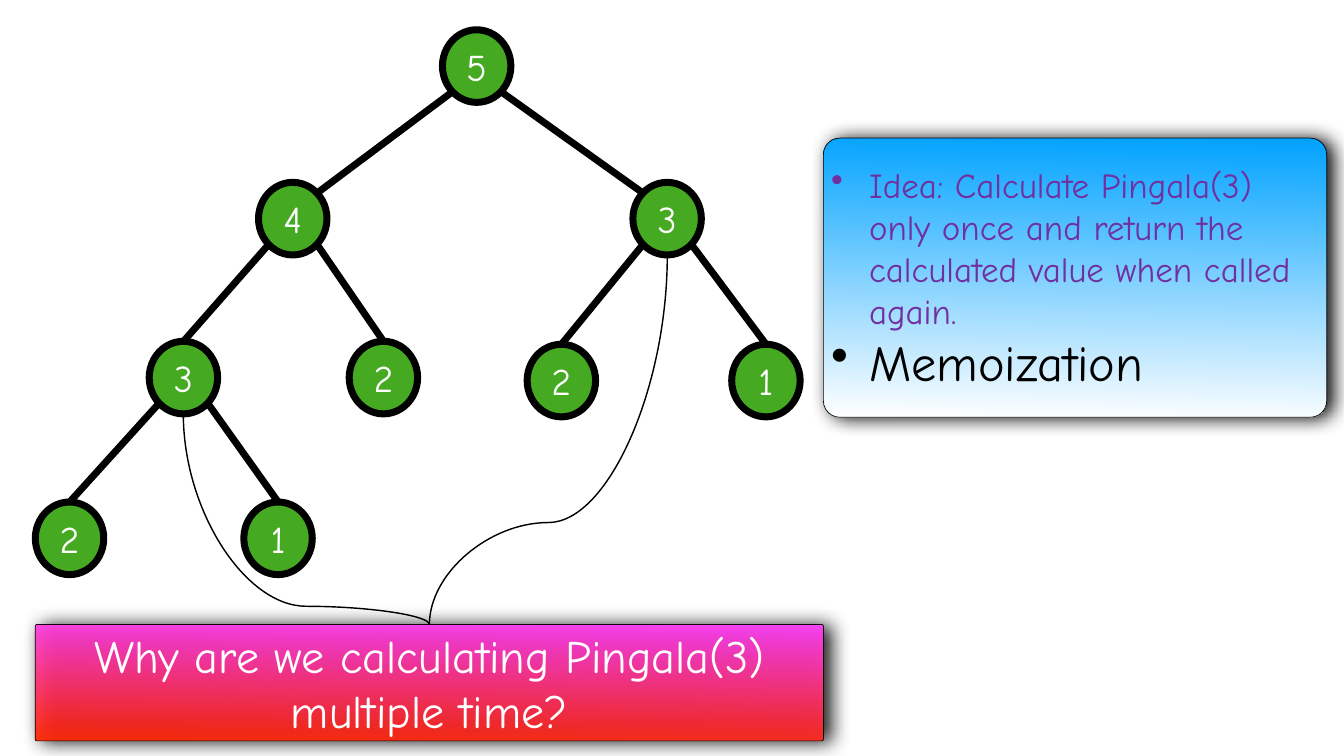
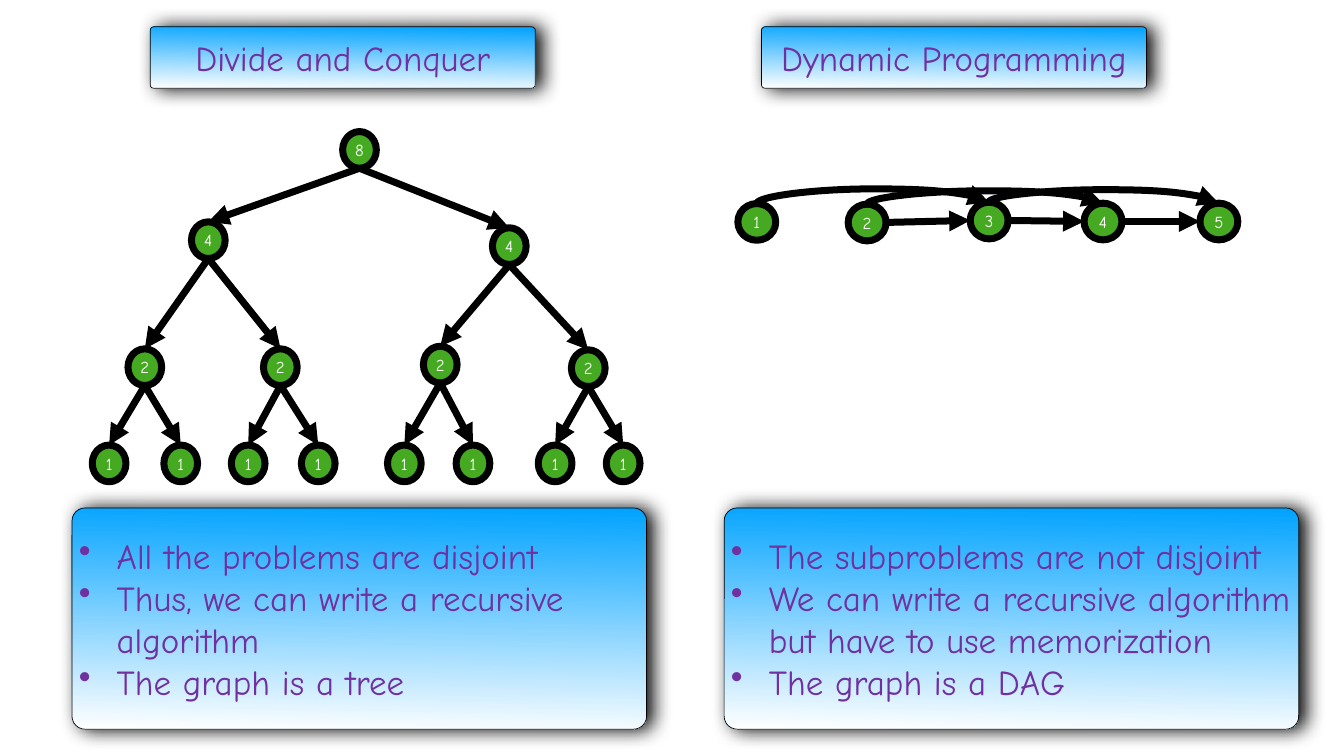
from lxml import etree
from pptx import Presentation
from pptx import util as u
from pptx.dml.color import RGBColor
from pptx.enum import shapes, text
from pptx.oxml.ns import qn

FONT = "Comic Neue"
BLACK, WHITE, GREEN, PURPLE = "000000", "FFFFFF", "45AA21", "7030A0"
SKY = ("00A2FF", WHITE)
FIRE = ("FF40FF", "FF2600")
INSET = 0.06
DIAG = 0.1464  # where a circle's 45 degree point lies, as a share of its box


def size(inch):
    """Turn a layout unit (one inch) into a length."""
    return u.Cm(round(inch * 2.54, 2))


def ink(code):
    return RGBColor.from_string(code)


def sub(node, tag, **attrs):
    """Add an XML child with attributes."""
    kid = etree.SubElement(node, qn(tag))
    for key, val in attrs.items():
        kid.set(key, str(val))
    return kid


def write(shape, lines, pt=50, color=PURPLE, bullet=False):
    """Fill a shape with lines; a line may be (text, size, colour)."""
    frame = shape.text_frame
    frame.word_wrap = True
    frame.vertical_anchor = text.MSO_ANCHOR.MIDDLE
    frame.margin_left = frame.margin_right = size(INSET)
    frame.margin_top = frame.margin_bottom = size(INSET)
    for i, line in enumerate(lines):
        words, high, tone = line if isinstance(line, tuple) else (line, pt, color)
        para = frame.paragraphs[0] if i == 0 else frame.add_paragraph()
        para.alignment = text.PP_ALIGN.LEFT if bullet else text.PP_ALIGN.CENTER
        if bullet:
            props = para._p.get_or_add_pPr()
            props.set("marL", str(size(0.75)))
            props.set("indent", str(-size(0.75)))
            sub(props, "a:buChar", char="•")
        run = para.add_run()
        run.text = words
        run.font.name = FONT
        run.font.size = u.Pt(high)
        run.font.color.rgb = ink(tone)


def panel(slide, box, lines, fill=SKY, round_by=0.059, alpha=None, **style):
    """Rounded box with a gradient and a soft shadow."""
    shape = slide.shapes.add_shape(
        shapes.MSO_SHAPE.ROUNDED_RECTANGLE, *map(size, box))
    shape.adjustments[0] = round_by
    shape.fill.gradient()
    shape.fill.gradient_angle = 269
    for stop, code in zip(shape.fill.gradient_stops, fill):
        stop.color.rgb = ink(code)
    shape.line.color.rgb = ink(BLACK)
    shape.line.width = u.Pt(1)
    props = shape._element.spPr
    if alpha:
        for tone in props.iter(qn("a:srgbClr")):
            sub(tone, "a:alpha", val=alpha * 1000)
    cast = sub(sub(props, "a:effectLst"), "a:outerShdw", blurRad=u.Pt(28),
               dist=u.Pt(9), dir=0, algn="ctr", rotWithShape=0)
    sub(sub(cast, "a:srgbClr", val=BLACK), "a:alpha", val=97000)
    write(shape, lines, **style)


def disc(slide, box, label, pt):
    shape = slide.shapes.add_shape(shapes.MSO_SHAPE.OVAL, *map(size, box))
    shape.shadow.inherit = False
    shape.fill.solid()
    shape.fill.fore_color.rgb = ink(GREEN)
    shape.line.color.rgb = ink(BLACK)
    shape.line.width = u.Pt(10)
    write(shape, [label], pt=pt, color=WHITE)


def link(slide, start, end, pt=10, arrow=False, kind=shapes.MSO_CONNECTOR.STRAIGHT):
    line = slide.shapes.add_connector(kind, *map(size, (*start, *end)))
    line.line.color.rgb = ink(BLACK)
    line.line.width = u.Pt(pt)
    if arrow:
        sub(line.line._get_or_add_ln(), "a:tailEnd", type="triangle")
    sub(line._element.spPr, "a:effectLst")
    return line


def curve(slide, start, end, bend, **style):
    """Curve that leaves and arrives upright, lying flat at height bend."""
    line = link(slide, start, end, kind=shapes.MSO_CONNECTOR.CURVE, **style)
    (ax, ay), (bx, by) = start, end
    wide, high = abs(by - ay), abs(bx - ax)
    line.left, line.top = size((ax + bx - wide) / 2), size((ay + by - high) / 2)
    line.width, line.height = size(wide), size(high)
    frame = line._element.spPr.find(qn("a:xfrm"))
    frame.set("rot", str(270 * 60000))
    frame.set("flipH", str(int(by > ay)))
    frame.set("flipV", str(int(bx < ax)))
    geom = line._element.spPr.find(qn("a:prstGeom"))
    for old in list(geom):
        geom.remove(old)
    share = round((bend - ay) / (by - ay) * 100000)
    sub(sub(geom, "a:avLst"), "a:gd", name="adj1", fmla=f"val {share}")


def tree(slide, box, nodes, pt, slant=False, arrow=False):
    """Draw (label, x, y, parent) nodes; box gives the origin and node size.

    With slant, edges leave at the lower corners instead of the bottom, and
    those of the root also arrive at the upper corners.
    """
    left, top, wide, high = box
    spots = [(left + x, top + y) for _, x, y, _ in nodes]
    for (label, *_), (x, y) in zip(nodes, spots):
        disc(slide, (x, y, wide, high), label, pt)
    for (*_, up), (x, y) in zip(nodes, spots):
        if up is None:
            continue
        px, py = spots[up]
        side = (0.5 - DIAG) * (1 if x > px else -1) if slant else 0
        start = px + wide * (0.5 + side), py + high * (1 - DIAG if slant else 1)
        end = x + wide / 2, y
        if slant and up == 0:
            end = x + wide * (0.5 - side), y + high * DIAG
        link(slide, start, end, arrow=arrow)


def chain(slide, box, nodes, pt):
    """Row of (label, x, y) nodes, with arrows to the next and the one after."""
    left, top, wide, high = box
    spots = [(left + x, top + y) for _, x, y in nodes]
    for (label, *_), (x, y) in zip(nodes, spots):
        disc(slide, (x, y, wide, high), label, pt)
    for (ax, ay), (bx, by) in zip(spots, spots[2:]):
        curve(slide, (ax + wide / 2, ay), (bx + wide / 2, by),
              min(ay, by) - 0.25, arrow=True)
    for (ax, ay), (bx, by) in zip(spots[1:], spots[2:]):
        link(slide, (ax + wide, ay + high / 2), (bx, by + high / 2), arrow=True)


def memo(slide):
    """Call tree with the repeated call pointed out."""
    calls = [("5", 8.08, 0, None), ("4", 4.43, 3.03, 0), ("3", 11.86, 3.03, 0),
             ("3", 2.26, 6.18, 1), ("2", 6.23, 6.18, 1),
             ("2", 9.76, 6.24, 2), ("1", 13.82, 6.24, 2),
             ("2", 0, 9.37, 3), ("1", 4.14, 9.37, 3)]
    tree(slide, (0.7, 0.59, 1.36, 1.44), calls, 54, slant=True)
    ask = (8.52, 12.39)
    curve(slide, (3.64, 8.21), ask, 12.03, pt=2)
    panel(slide, (0.7, 12.39, 15.64, 2.31),
          ["Why are we calculating Pingala(3) multiple time?"],
          fill=FIRE, round_by=0.017, alpha=93, pt=66, color=WHITE)
    panel(slide, (16.34, 2.74, 9.99, 5.54),
          ["Idea: Calculate Pingala(3) only once and return the calculated "
           "value when called again.", ("Memoization", 72, BLACK)], bullet=True)
    curve(slide, (13.24, 5.06), ask, 10.37, pt=2)


def versus(slide):
    """Two methods side by side: heading, graph and remarks."""
    halves = [
        (2.98, "Divide and Conquer", 1.43,
         ["All the problems are disjoint",
          "Thus, we can write a recursive algorithm", "The graph is a tree"]),
        (15.11, "Dynamic Programming", 14.37,
         ["The subproblems are not disjoint",
          "We can write a recursive algorithm but have to use memorization",
          "The graph is a DAG"])]
    for head, name, left, notes in halves:
        panel(slide, (head, 0.53, 7.64, 1.22), [name])
        panel(slide, (left, 10.08, 11.4, 4.39), notes, bullet=True)
    parts = [("8", 4.97, 0, None), ("4", 1.97, 1.79, 0), ("4", 7.94, 1.91, 0),
             ("2", 0.71, 4.31, 1), ("2", 3.4, 4.31, 1),
             ("2", 6.57, 4.26, 2), ("2", 9.51, 4.33, 2)]
    leaves = (0, 1.42, 2.76, 4.15, 5.86, 7.22, 8.85, 10.2)
    parts += [("1", x, 6.22, 3 + i // 2) for i, x in enumerate(leaves)]
    tree(slide, (1.83, 2.61, 0.67, 0.73), parts, 24, arrow=True)
    steps = [("1", 0, 0.03), ("2", 2.19, 0.04), ("3", 4.61, 0),
             ("4", 6.87, 0.02), ("5", 9.17, 0.02)]
    chain(slide, (14.64, 4.01, 0.75, 0.73), steps, 24)


def main():
    deck = Presentation()
    deck.slide_width, deck.slide_height = size(26.67), size(15)
    for build in (memo, versus):
        build(deck.slides.add_slide(deck.slide_layouts[6]))
    deck.save("out.pptx")


if __name__ == "__main__":
    main()
